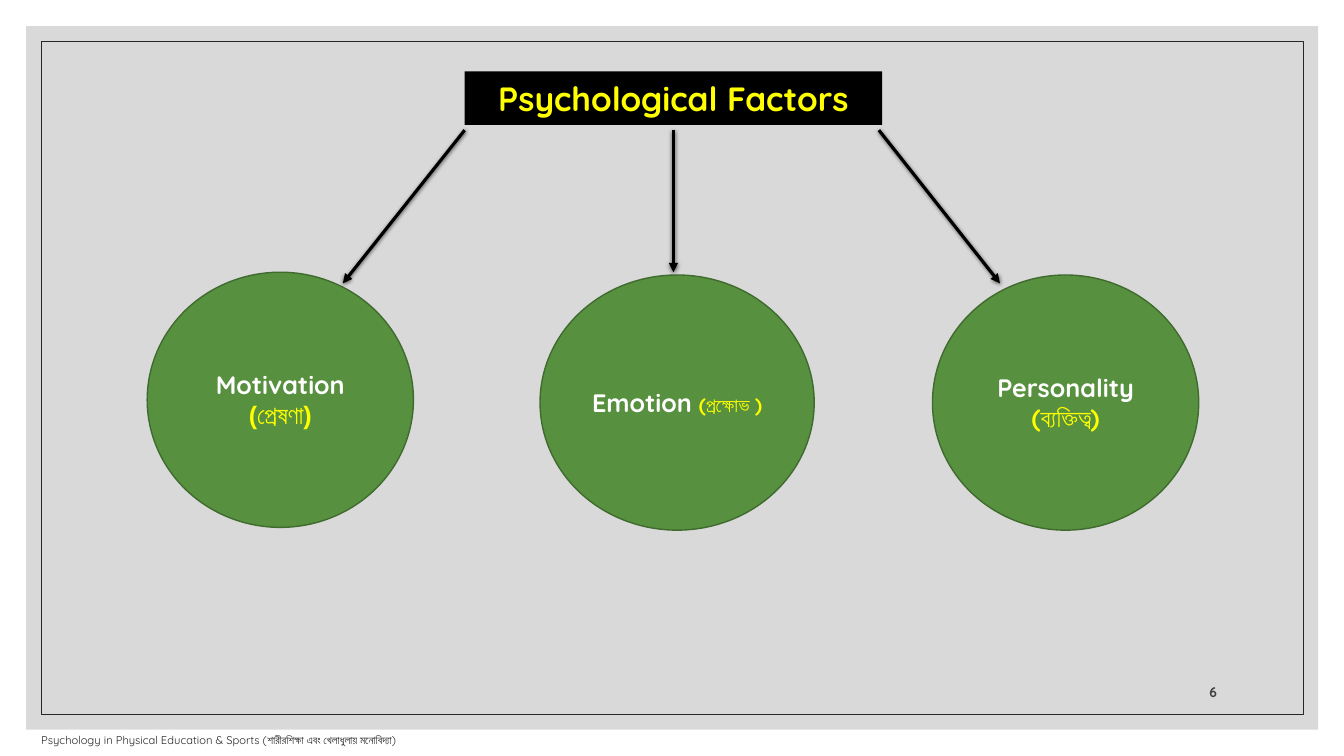
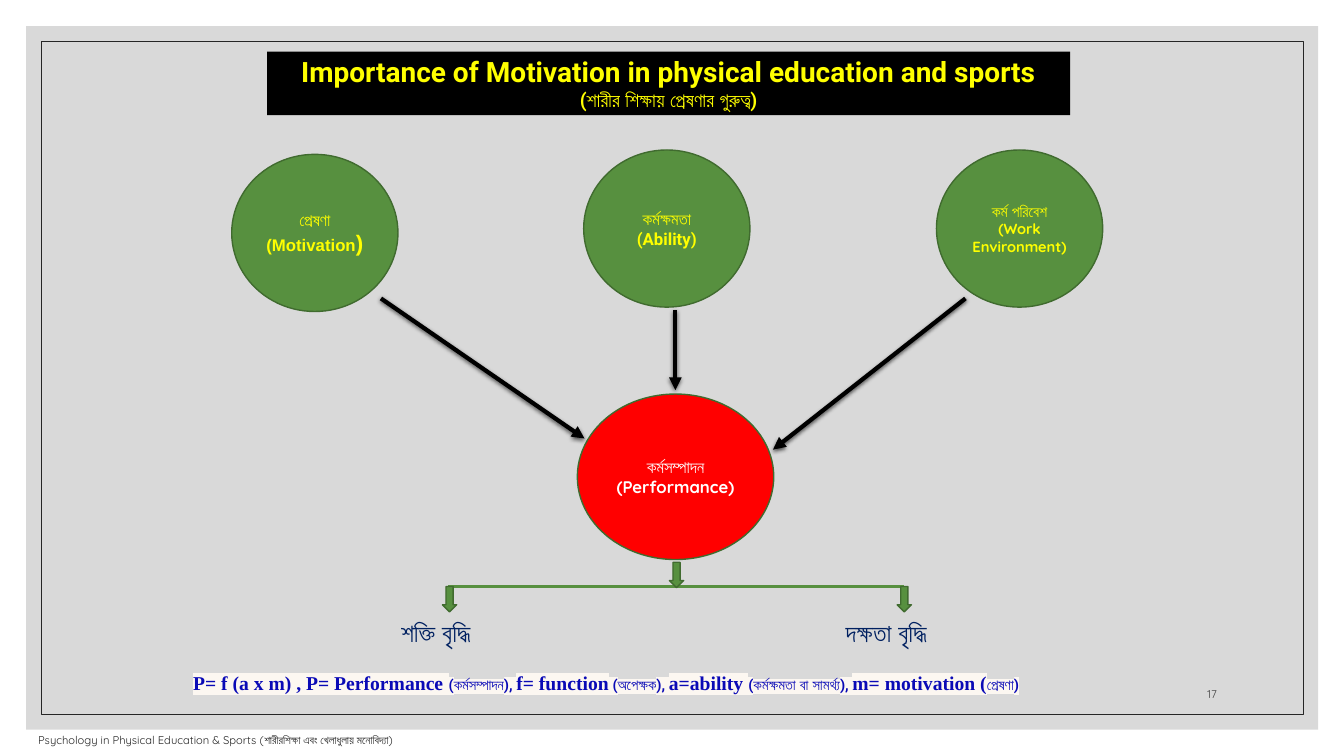
"""Build two slides on psychological factors and motivation in sport."""
from dataclasses import dataclass

import pptx
import pptx.util
import pptx.dml.color
import pptx.enum.shapes
import pptx.enum.text
import pptx.oxml
import pptx.oxml.ns

Cm, Pt = pptx.util.Cm, pptx.util.Pt
SHAPE = pptx.enum.shapes.MSO_SHAPE
ALIGN = pptx.enum.text.PP_ALIGN
ANCHOR = pptx.enum.text.MSO_ANCHOR


@dataclass(frozen=True)
class Style:
    size: float
    font: str
    color: str
    bold: bool = True
    highlight: str = ""


@dataclass(frozen=True)
class Theme:
    backdrop: str = "D9D9D9"
    frame: str = "262626"
    banner: str = "000000"
    arrow: str = "000000"
    green: str = "57903F"
    green_edge: str = "406B2F"
    red: str = "FF0000"
    yellow: str = "FFFF00"
    white: str = "FFFFFF"
    navy: str = "002060"
    blue: str = "0A0AB6"
    cream: str = "FCF7F1"
    grey: str = "404040"
    head: str = "Quicksand"
    body: str = "Roboto"
    plain: str = "Arial"
    serif: str = "Times New Roman"


T = Theme()
FACTOR = Style(18, T.head, T.white)
FACTOR_BN = Style(18, T.head, T.yellow)
CAUSE = Style(12, T.body, T.yellow)
RESULT = Style(12, T.head, T.white)
OUTCOME = Style(18, T.head, T.navy)
FORMULA = Style(14, T.serif, T.blue, highlight=T.cream)
FORMULA_BN = Style(10.5, T.body, T.blue, highlight=T.cream)
FOOTER = Style(8, T.head, T.frame, False)

FOOTER_TEXT = "Psychology in Physical Education & Sports (শারীরশিক্ষা এবং খেলাধুলায় মনোবিদ্যা)"

SLIDES = [
    {
        "title": ((11.71, 1.8, 10.52, 1.35),
                  [[("Psychological Factors", Style(24, T.head, T.yellow))]]),
        "circles": [
            ((3.71, 6.86, 6.71, 6.43), T.green,
             [[("Motivation", FACTOR)], [("(প্রেষণা)", Style(18, T.plain, T.yellow))]]),
            ((13.61, 6.93, 6.91, 6.43), T.green,
             [[("Emotion ", FACTOR), ("(প্রক্ষোভ )", Style(14, T.head, T.yellow))]]),
            ((23.5, 6.93, 6.71, 6.43), T.green,
             [[("Personality", FACTOR)], [("(ব্যক্তিত্ব)", FACTOR_BN)]]),
        ],
        "arrow_width": 2.25,
        "arrows": [(11.71, 3.28, 8.64, 7.14), (16.97, 3.28, 16.97, 6.86),
                   (22.15, 3.28, 25.2, 7.14)],
        "footer_left": 0.79,
        "number": ("6", Style(10, T.head, T.grey)),
    },
    {
        "title": ((6.73, 1.3, 20.24, 1.6),
                  [[("Importance of Motivation in physical education and sports",
                     Style(20, T.body, T.yellow))],
                   [("(শারীর শিক্ষায় প্রেষণার গুরুত্ব)", Style(14, T.body, T.yellow))]]),
        "circles": [
            ((5.84, 3.89, 4.19, 3.96), T.green,
             [[("প্রেষণা", CAUSE)],
              [("(Motivation", Style(12, T.plain, T.yellow)),
               (")", Style(16, T.plain, T.yellow))]]),
            ((14.71, 3.78, 4.19, 3.96), T.green,
             [[("কর্মক্ষমতা", CAUSE)], [("(Ability)", CAUSE)]]),
            ((23.6, 3.78, 4.19, 3.96), T.green,
             [[("কর্ম পরিবেশ", Style(11, T.body, T.yellow))],
              [("(Work Environment)", Style(10.5, T.head, T.yellow))]]),
            ((14.55, 9.93, 4.95, 4.17), T.red,
             [[("কর্মসম্পাদন", RESULT)], [("(Performance)", RESULT)]]),
        ],
        "arrow_width": 3,
        "arrows": [(9.6, 7.52, 14.73, 11.05), (17.02, 7.82, 17.02, 9.83),
                   (24.33, 7.52, 19.48, 11.33)],
        "footer_left": 0.71,
        "number": ("17", Style(8, T.head, T.grey, False)),
    },
]

BRANCH_BAR = (11.3, 14.78, 22.78, 14.78)
BRANCH_ARROWS = [(16.87, 14.17), (11.15, 14.78), (22.61, 14.78)]
BRANCH_ARROW_SIZE = (0.36, 0.64)
OUTCOMES = [((9.86, 15.44, 3.05, 1.02), "শক্তি বৃদ্ধি"),
            ((21.06, 15.44, 3.56, 1.02), "দক্ষতা বৃদ্ধি")]
FORMULA_AREA = (4.62, 16.79, 24.77, 0.86)
FORMULA_RUNS = [
    ("P= f (a x m) , P= Performance ", FORMULA),
    ("(কর্মসম্পাদন), ", FORMULA_BN),
    ("f= function", FORMULA),
    (" (অপেক্ষক), ", FORMULA_BN),
    ("a=ability ", FORMULA),
    ("(কর্মক্ষমতা বা সামর্থ্য), ", FORMULA_BN),
    ("m= motivation (", FORMULA),
    ("প্রেষণা)", FORMULA_BN),
]


def rgb(code):
    return pptx.dml.color.RGBColor.from_string(code)


def element(xml):
    return pptx.oxml.parse_xml(xml.replace(">", " " + pptx.oxml.ns.nsdecls("a") + ">", 1))


def write(shape, paragraphs, align=ALIGN.LEFT, anchor=ANCHOR.TOP):
    frame = shape.text_frame
    frame.word_wrap = True
    frame.vertical_anchor = anchor
    for index, runs in enumerate(paragraphs):
        para = frame.add_paragraph() if index else frame.paragraphs[0]
        para.alignment = align
        for text, style in runs:
            span = para.add_run()
            span.text = text
            span.font.size = Pt(style.size)
            span.font.name = style.font
            span.font.bold = style.bold
            span.font.color.rgb = rgb(style.color)
            if style.highlight:
                fill = span.font.fill._xPr.find(pptx.oxml.ns.qn("a:solidFill"))
                fill.addnext(element(
                    f'<a:highlight><a:srgbClr val="{style.highlight}"/></a:highlight>'))


def add_shape(page, kind, area, fill=None, edge=None, width=1):
    shape = page.shapes.add_shape(kind, *map(Cm, area))
    shape.shadow.inherit = False
    for part, color in ((shape.fill, fill), (shape.line.fill, edge)):
        if color:
            part.solid()
            part.fore_color.rgb = rgb(color)
        else:
            part.background()
    if edge:
        shape.line.width = Pt(width)
    return shape


def add_text(page, area, paragraphs, align=ALIGN.LEFT, anchor=ANCHOR.TOP):
    write(page.shapes.add_textbox(*map(Cm, area)), paragraphs, align, anchor)


def add_line(page, ends, color, width, arrow=False):
    line = page.shapes.add_connector(pptx.enum.shapes.MSO_CONNECTOR.STRAIGHT, *map(Cm, ends))
    line.line.color.rgb = rgb(color)
    line.line.width = Pt(width)
    effects = element("<a:effectLst></a:effectLst>")
    if arrow:
        line.line._get_or_add_ln().append(element('<a:tailEnd type="triangle"></a:tailEnd>'))
        effects.append(element(
            f'<a:outerShdw blurRad="{Pt(3)}" dist="{Pt(1)}" dir="5400000" rotWithShape="0">'
            '<a:srgbClr val="000000"><a:alpha val="63000"/></a:srgbClr></a:outerShdw>'))
    line._element.spPr.append(effects)


def add_page(deck, content):
    page = deck.slides.add_slide(deck.slide_layouts[6])
    add_shape(page, SHAPE.RECTANGLE, (0.66, 0.66, 32.56, 17.73), T.backdrop)
    add_shape(page, SHAPE.RECTANGLE, (1.04, 1.04, 31.8, 16.97), edge=T.frame, width=0.5)
    area, title = content["title"]
    write(add_shape(page, SHAPE.RECTANGLE, area, T.banner), title, ALIGN.CENTER, ANCHOR.MIDDLE)
    for area, fill, label in content["circles"]:
        circle = add_shape(page, SHAPE.OVAL, area, fill, T.green_edge)
        write(circle, label, ALIGN.CENTER, ANCHOR.MIDDLE)
    for ends in content["arrows"]:
        add_line(page, ends, T.arrow, content["arrow_width"], arrow=True)
    add_text(page, (content["footer_left"], 17.91, 16.15, 1.02),
             [[(FOOTER_TEXT, FOOTER)]], anchor=ANCHOR.BOTTOM)
    add_text(page, (28.58, 16.76, 2.34, 1.02), [[content["number"]]],
             ALIGN.RIGHT, ANCHOR.BOTTOM)
    return page


def add_outcomes(page):
    add_line(page, BRANCH_BAR, T.green, 2.25)
    for corner in BRANCH_ARROWS:
        add_shape(page, SHAPE.DOWN_ARROW, corner + BRANCH_ARROW_SIZE, T.green, T.green_edge)
    for area, text in OUTCOMES:
        add_text(page, area, [[(text, OUTCOME)]])
    add_text(page, FORMULA_AREA, [FORMULA_RUNS])


def main():
    deck = pptx.Presentation()
    deck.slide_width, deck.slide_height = Cm(33.87), Cm(19.05)
    pages = [add_page(deck, content) for content in SLIDES]
    add_outcomes(pages[1])
    deck.save("out.pptx")


if __name__ == "__main__":
    main()
